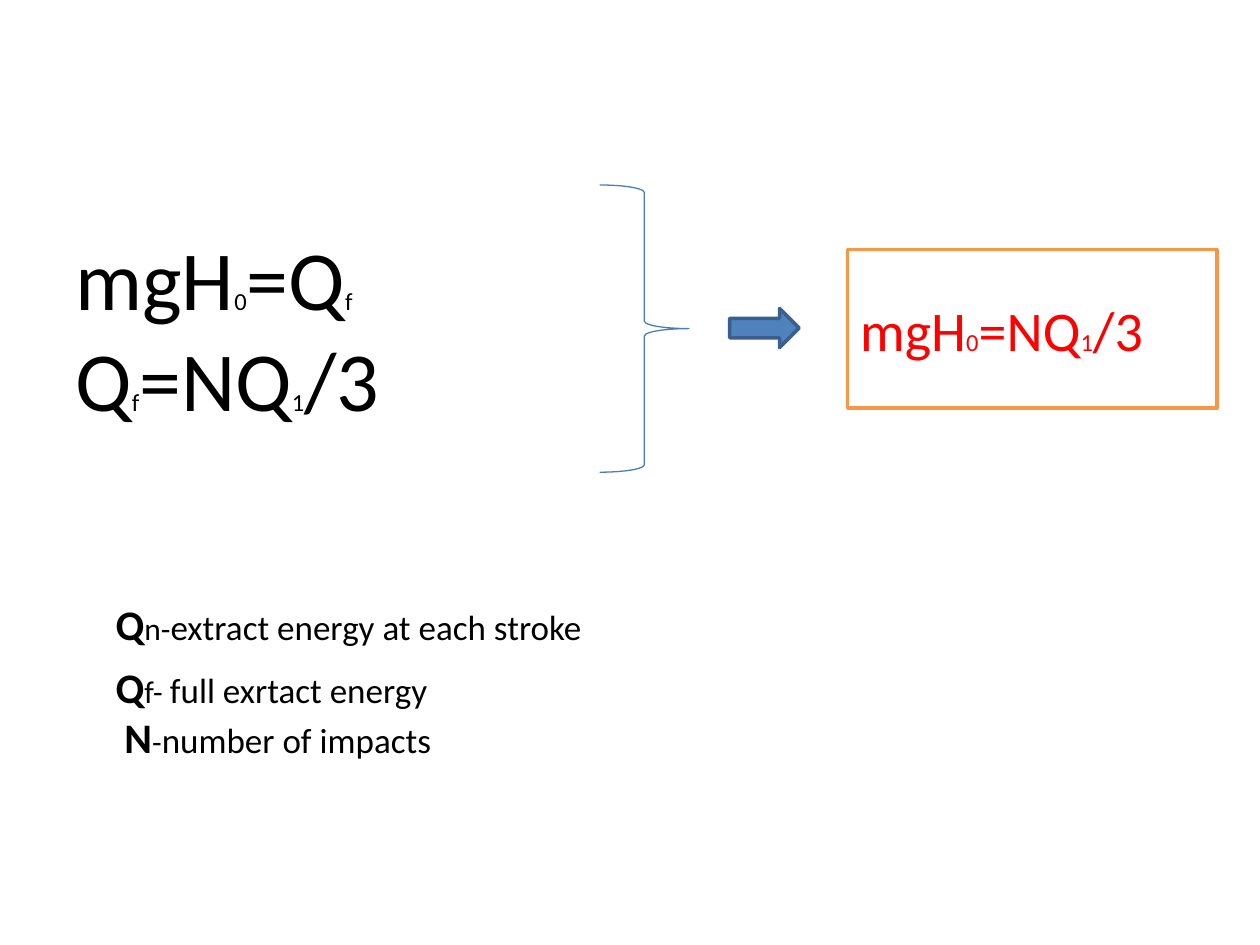
from pptx import Presentation
from pptx import util as u
from pptx.dml.color import RGBColor
from pptx.enum import shapes, text

BLACK, RED = "000000", "FF0000"


def rgb(color):
    return RGBColor.from_string(color)


def add_runs(p, runs, color):
    """Fill a paragraph with (wording, size) or (wording, size, bold) runs."""
    p.alignment = text.PP_ALIGN.LEFT
    p.font.name = "Calibri"
    p.font.color.rgb = rgb(color)
    for wording, size, *bold in runs:
        r = p.add_run()
        r.text = wording
        r.font.size = u.Pt(size)
        if bold:
            r.font.bold = bold[0]


def formula(p, parts, size, color=BLACK):
    """Alternate full-size symbols with small indices."""
    add_runs(p, [(t, 14 if i % 2 else size) for i, t in enumerate(parts)], color)


def add_text(s, box, wrap=True):
    tf = s.shapes.add_textbox(*map(u.Cm, box)).text_frame
    tf.word_wrap = wrap
    return tf


def add_shape(s, kind, box, line, width, fill=None):
    sp = s.shapes.add_shape(kind, *map(u.Cm, box))
    sp.shadow.inherit = False
    sp.line.color.rgb = rgb(line)
    sp.line.width = u.Pt(width)
    if fill:
        sp.fill.solid()
        sp.fill.fore_color.rgb = rgb(fill)
    else:
        sp.fill.background()
    return sp


def add_legend(s, box, symbol, link, meaning, wrap=True):
    tf = add_text(s, box, wrap)
    add_runs(tf.paragraphs[0],
             [(symbol, 24, True), (link, 18), (meaning, 20)], BLACK)


def main():
    prs = Presentation()
    prs.slide_width, prs.slide_height = u.Cm(25.4), u.Cm(19.05)
    s = prs.slides.add_slide(prs.slide_layouts[6])
    kinds = shapes.MSO_SHAPE

    # Starting equations
    tf = add_text(s, (1.27, 4.45, 22.86, 12.57))
    formula(tf.paragraphs[0], ["mgH", "0", "=Q", "f"], 48)
    formula(tf.add_paragraph(), ["Q", "f", "=NQ", "1", "/3"], 48)

    # Brace and arrow leading to the result
    add_shape(s, kinds.RIGHT_BRACE, (12.09, 3.73, 1.8, 5.79), "4A7EBB", 0.75)
    add_shape(s, kinds.RIGHT_ARROW, (14.71, 6.22, 1.4, 0.79), "3A5F8C", 2, "4F81BD")

    # Result
    sp = add_shape(s, kinds.RECTANGLE, (17.09, 5.03, 7.44, 3.2), "F79646", 2, "FFFFFF")
    tf = sp.text_frame
    tf.vertical_anchor = text.MSO_ANCHOR.MIDDLE
    formula(tf.paragraphs[0], ["mgH", "0", "=NQ", "1", "/3"], 32, RED)

    # Meaning of the symbols
    add_legend(s, (2.08, 11.94, 10.39, 1.27), "Q", "n-", "extract energy at each stroke")
    add_legend(s, (2.08, 13.21, 8.79, 1.27), "Q", "f- ", "full exrtact energy")
    add_legend(s, (2.26, 14.22, 6.71, 1.27), "N", "-", "number of impacts", wrap=False)

    prs.save("out.pptx")


if __name__ == "__main__":
    main()
